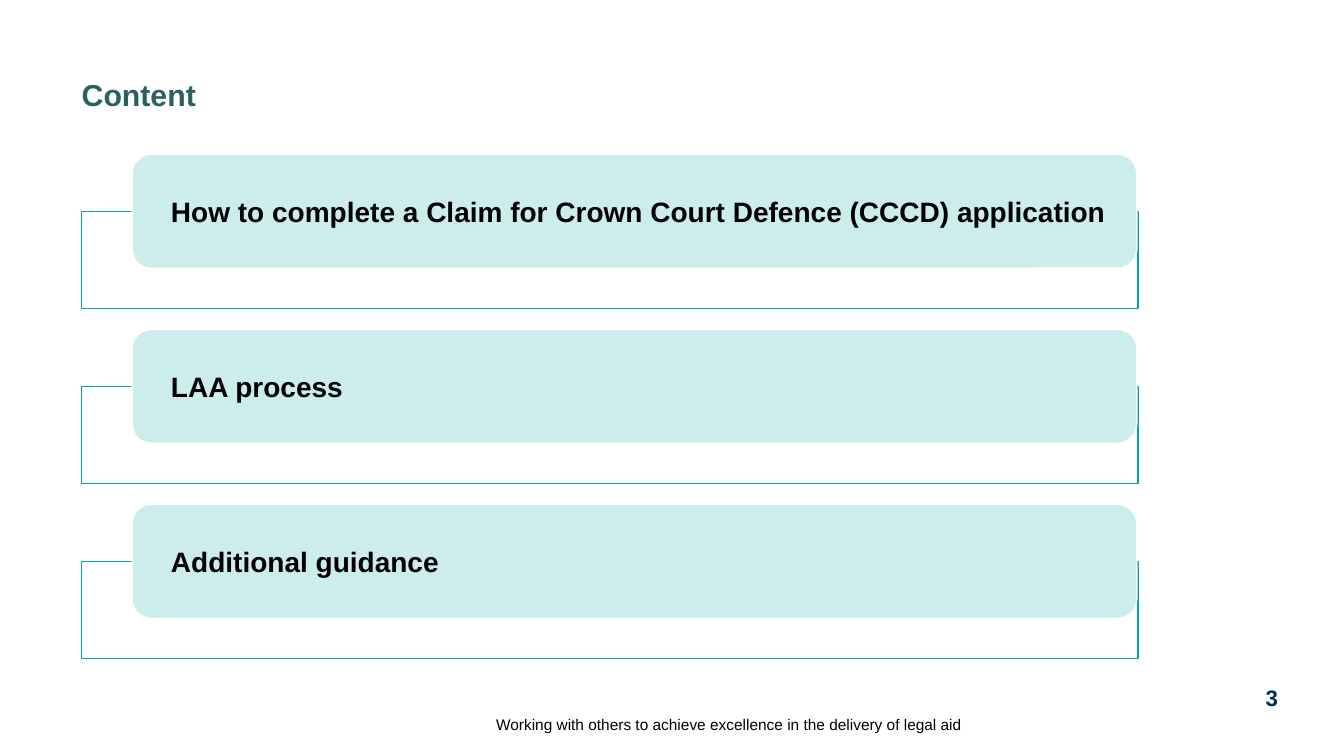
"""Build a contents slide with three framed topic bars."""
from pptx import Presentation
from pptx.dml.color import RGBColor as Rgb
from pptx.enum.shapes import MSO_SHAPE as Kind
from pptx.enum.text import MSO_ANCHOR as Anchor, PP_ALIGN as Align
from pptx.util import Cm, Pt

WHITE = Rgb(0xFF, 0xFF, 0xFF)
BLACK = Rgb(0x00, 0x00, 0x00)
GREEN = Rgb(0x27, 0x61, 0x60)
TEAL = Rgb(0x00, 0xA5, 0xA1)
MINT = Rgb(0xCC, 0xED, 0xEC)
NAVY = Rgb(0x00, 0x30, 0x57)

TOPICS = [
    "How to complete a Claim for Crown Court Defence (CCCD) application",
    "LAA process",
    "Additional guidance",
]


def write(shape, text, size, color, bold=True, align=Align.LEFT,
          anchor=Anchor.TOP, left=0, right=0):
    """Fill a shape with one formatted paragraph."""
    frame = shape.text_frame
    frame.text = text
    frame.word_wrap = True
    frame.vertical_anchor = anchor
    frame.margin_left, frame.margin_right = Cm(left), Cm(right)
    frame.margin_top = frame.margin_bottom = 0
    para = frame.paragraphs[0]
    para.alignment = align
    font = para.runs[0].font
    font.name, font.size, font.bold = "Arial", Pt(size), bold
    font.color.rgb = color


def label(slide, box, text, size, color, **style):
    """Add a text box at the given place."""
    area = slide.shapes.add_textbox(*map(Cm, box))
    write(area, text, size, color, **style)


def panel(slide, kind, box, fill, line):
    """Add a filled and outlined shape."""
    shape = slide.shapes.add_shape(kind, *map(Cm, box))
    shape.shadow.inherit = False
    shape.fill.solid()
    shape.fill.fore_color.rgb = fill
    shape.line.color.rgb = line
    shape.line.width = Pt(1)
    return shape


def topic(slide, box, text):
    """Place a topic bar over its open frame inside a box."""
    left, top, width, height = box
    bar = 2.87
    drop = bar / 2
    panel(slide, Kind.RECTANGLE,
          (left, top + drop, width, height - drop), WHITE, TEAL)
    shape = panel(slide, Kind.ROUNDED_RECTANGLE,
                  (left + 1.27, top, width - 1.3, bar), MINT, WHITE)
    write(shape, text, 20, BLACK, anchor=Anchor.MIDDLE, left=0.84, right=0.5)


def topics(slide, box, names):
    """Stack the topics evenly down a box."""
    left, top, width, height = box
    gap = 0.53
    step = (height + gap) / len(names)
    for row, name in enumerate(names):
        topic(slide, (left, top + row * step, width, step - gap), name)


def footer(slide, box):
    """Place the motto and the page number in the bottom band."""
    left, top, width, height = box
    label(slide, (left, top + 0.33, 18.92, height - 0.33),
          "Working with others to achieve excellence in the delivery of legal aid",
          11, BLACK, bold=False, align=Align.RIGHT, anchor=Anchor.BOTTOM)
    label(slide, (left + width - 0.76, top, 0.76, 0.71), "3", 16, NAVY,
          align=Align.CENTER)


def main():
    """Build and save the slide."""
    deck = Presentation()
    deck.slide_width, deck.slide_height = Cm(33.87), Cm(19.05)
    slide = deck.slides.add_slide(deck.slide_layouts[6])
    label(slide, (2.06, 1.93, 21.44, 0.97), "Content", 21.6, GREEN)
    topics(slide, (2.06, 3.89, 26.62, 12.7), TOPICS)
    footer(slide, (5.33, 17.25, 27.1, 1.24))
    deck.save("out.pptx")


if __name__ == "__main__":
    main()
